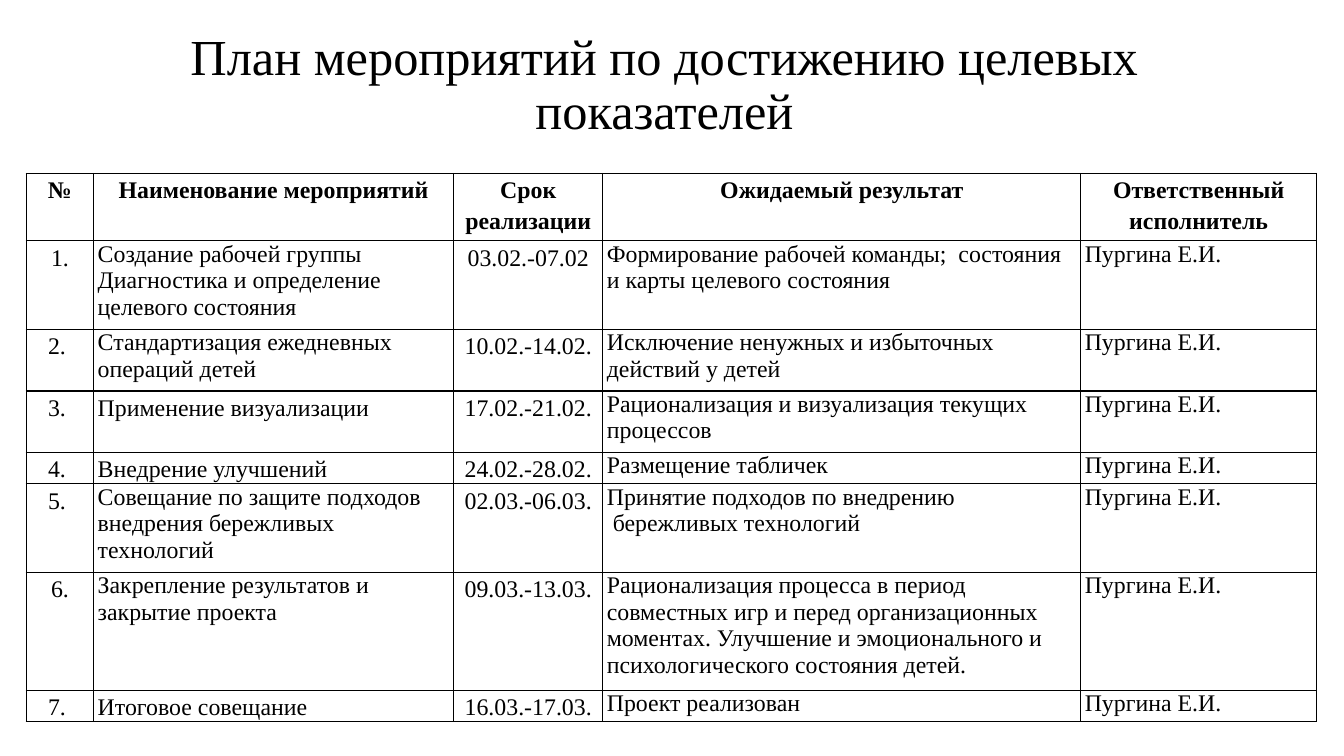
from dataclasses import dataclass

from lxml.etree import SubElement
from pptx import Presentation
from pptx.dml.color import RGBColor
from pptx.enum.text import MSO_ANCHOR as Anchor, MSO_AUTO_SIZE as AutoSize, PP_ALIGN as Align
from pptx.oxml.ns import qn
from pptx.util import Inches, Pt

COLORS = {"ink": "000000", "paper": "FFFFFF"}
FONT = "Times New Roman"
WIDTH, HEIGHT = Inches(13.33), Inches(7.5)
COLUMNS = [0.67, 3.57, 1.48, 4.74, 2.34]
ROWS = [0.67, 0.88, 0.61, 0.61, 0.31, 0.88, 1.17, 0.31]
HEADINGS = ["№", "Наименование мероприятий", "Срок реализации",
            "Ожидаемый результат", "Ответственный исполнитель"]
EXECUTOR = "Пургина Е.И."
CELL_FORMAT = {"margin_left": Inches(0.04), "margin_right": Inches(0.04),
               "margin_top": 0, "margin_bottom": 0, "vertical_anchor": Anchor.TOP}
LOOSE = {"line_spacing": 1.15}
CENTERED = {"alignment": Align.CENTER, **LOOSE}
PLAIN = {"alignment": Align.LEFT, "line_spacing": 1.0}


@dataclass
class Activity:
    number: str
    name: str
    dates: str
    result: str
    name_format: dict


ACTIVITIES = [
    Activity("1.", "Создание рабочей группы\nДиагностика и определение целевого состояния",
             "03.02.-07.02",
             "Формирование рабочей команды;  состояния и карты целевого состояния", PLAIN),
    Activity("2. ", "Стандартизация ежедневных операций детей", "10.02.-14.02.",
             "Исключение ненужных и избыточных действий у детей", PLAIN),
    Activity("3. ", "Применение визуализации", "17.02.-21.02.",
             "Рационализация и визуализация текущих процессов", LOOSE),
    Activity("4. ", "Внедрение улучшений", "24.02.-28.02.", "Размещение табличек", LOOSE),
    Activity("5. ", "Совещание по защите подходов внедрения бережливых технологий",
             "02.03.-06.03.",
             "Принятие подходов по внедрению\n бережливых технологий", PLAIN),
    Activity("6.", "Закрепление результатов и закрытие проекта", "09.03.-13.03.",
             "Рационализация процесса в период совместных игр и перед организационных "
             "моментах. Улучшение и эмоционального и психологического состояния детей.", PLAIN),
    Activity("7. ", "Итоговое совещание", "16.03.-17.03.", "Проект реализован", LOOSE),
]


def apply(target, values: dict) -> None:
    for attribute, value in values.items():
        setattr(target, attribute, value)


def write(frame, text: str, size: float, paragraph_format: dict, bold: bool = False) -> None:
    frame.text = text
    for paragraph in frame.paragraphs:
        apply(paragraph, paragraph_format)
        for run in paragraph.runs:
            apply(run.font, {"name": FONT, "size": Pt(size), "bold": bold})
            run.font.color.rgb = RGBColor.from_string(COLORS["ink"])


def draw_borders(cell) -> None:
    properties = cell._tc.get_or_add_tcPr()
    for position, side in enumerate(("lnL", "lnR", "lnT", "lnB")):
        line = SubElement(properties, qn(f"a:{side}"), w=str(Pt(1)))
        fill = SubElement(line, qn("a:solidFill"))
        SubElement(fill, qn("a:srgbClr"), val=COLORS["ink"])
        properties.insert(position, line)


def fill_cell(cell, text: str, paragraph_format: dict, bold: bool = False) -> None:
    apply(cell, CELL_FORMAT)
    cell.fill.solid()
    cell.fill.fore_color.rgb = RGBColor.from_string(COLORS["paper"])
    draw_borders(cell)
    write(cell.text_frame, text, 17, paragraph_format, bold)


def add_title(slide) -> None:
    title = slide.shapes.title
    apply(title, {"left": Inches(0.84), "top": Inches(0.13),
                  "width": Inches(11.5), "height": Inches(1.45)})
    apply(title.text_frame, {"word_wrap": True, "auto_size": AutoSize.NONE,
                             "vertical_anchor": Anchor.MIDDLE})
    write(title.text_frame, "План мероприятий по достижению целевых показателей", 36,
          {"alignment": Align.CENTER, "line_spacing": 0.9})


def add_plan(slide) -> None:
    plan = slide.shapes.add_table(len(ROWS), len(COLUMNS), Inches(0.26), Inches(1.72),
                                  Inches(sum(COLUMNS)), Inches(sum(ROWS))).table
    apply(plan, {"first_row": False, "horz_banding": False})
    for column, width in zip(plan.columns, COLUMNS):
        column.width = Inches(width)
    for row, height in zip(plan.rows, ROWS):
        row.height = Inches(height)
    for column, heading in enumerate(HEADINGS):
        fill_cell(plan.cell(0, column), heading, CENTERED, bold=True)
    for row, activity in enumerate(ACTIVITIES, 1):
        entries = [(activity.number, CENTERED), (activity.name, activity.name_format),
                   (activity.dates, CENTERED), (activity.result, PLAIN), (EXECUTOR, PLAIN)]
        for column, (text, paragraph_format) in enumerate(entries):
            fill_cell(plan.cell(row, column), text, paragraph_format)


def main() -> None:
    deck = Presentation()
    apply(deck, {"slide_width": WIDTH, "slide_height": HEIGHT})
    slide = deck.slides.add_slide(deck.slide_layouts.get_by_name("Title Only"))
    add_title(slide)
    add_plan(slide)
    deck.save("out.pptx")


if __name__ == "__main__":
    main()
